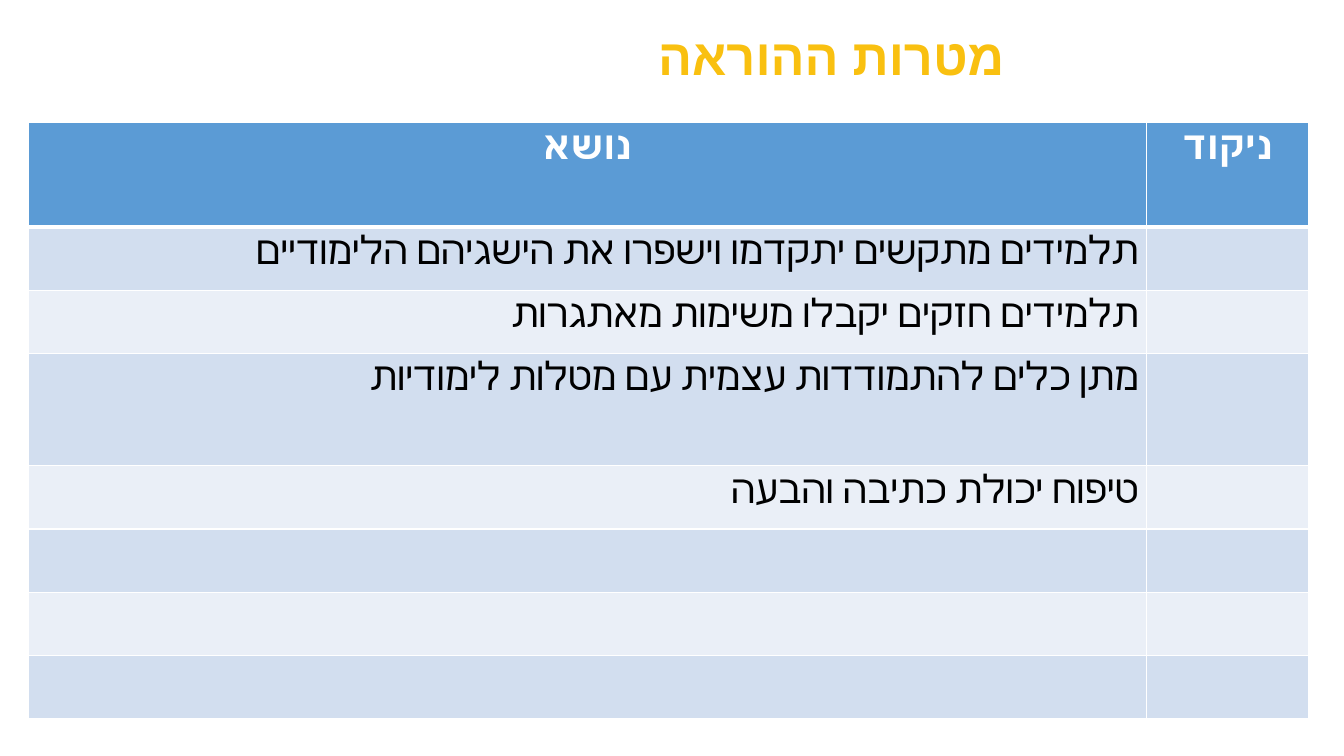
from lxml import etree
from pptx import Presentation
from pptx.dml.color import RGBColor
from pptx.enum.text import MSO_ANCHOR, MSO_AUTO_SIZE, PP_ALIGN
from pptx.oxml.ns import qn
from pptx.util import Cm, Pt

TOP = MSO_ANCHOR.TOP
FIXED = MSO_AUTO_SIZE.NONE
CENTER, RIGHT = PP_ALIGN.CENTER, PP_ALIGN.RIGHT

TITLE = "מטרות ההוראה"
HEAD = ("נושא", "ניקוד")
GOALS = [
    "תלמידים מתקשים יתקדמו וישפרו את הישגיהם הלימודיים",
    "תלמידים חזקים יקבלו משימות מאתגרות",
    "מתן כלים להתמודדות עצמית עם מטלות לימודיות",
    "טיפוח יכולת כתיבה והבעה",
    "",
    "",
    "",
]
ROWS = [HEAD] + [(goal, "") for goal in GOALS]
WIDTHS = (28.17, 4.09)
HEAD_TALL, ROW_TALL, WIDE_TALL = 2.64, 1.59, 2.84
WIDE_ROW = 3

THEME = {
    "title": {"size": Pt(36), "name": "Arial", "bold": True, "color": "F9C010"},
    "head": {"size": Pt(28), "name": "Calibri", "bold": True, "color": "FFFFFF"},
    "body": {"size": Pt(28), "name": "Calibri", "bold": False, "color": "000000"},
    "fill": "5B9BD5",
    "bands": ("D2DEEF", "EAEFF7"),
    "rule": "FFFFFF",
}


def apply(item, values):
    for key, value in values.items():
        setattr(item, key, value)


def style(para, look, align):
    para.alignment = align
    for run in para.runs:
        apply(run.font, {k: v for k, v in look.items() if k != "color"})
        run.font.color.rgb = RGBColor.from_string(look["color"])
        face = etree.SubElement(run.font._element, qn("a:cs"))
        face.set("typeface", look["name"])


def border(cell, base):
    props = cell._tc.get_or_add_tcPr()
    sides = {"lnL": 1, "lnR": 1, "lnT": 1, "lnB": base}
    for place, (side, width) in enumerate(sides.items()):
        line = etree.Element(qn(f"a:{side}"), w=str(Pt(width)))
        fill = etree.SubElement(line, qn("a:solidFill"))
        etree.SubElement(fill, qn("a:srgbClr"), val=THEME["rule"])
        props.insert(place, line)


def add_title(slide):
    title = slide.shapes.title
    apply(title, {"left": Cm(9.37), "top": Cm(-0.25),
                  "width": Cm(16.2), "height": Cm(2.29)})
    frame = title.text_frame
    frame.text = TITLE
    apply(frame, {"word_wrap": True, "auto_size": FIXED,
                  "vertical_anchor": TOP})
    para = frame.paragraphs[0]
    para.line_spacing = 1.5
    style(para, THEME["title"], RIGHT)
    para._p.get_or_add_pPr().set("rtl", "1")


def add_goals(slide):
    talls = [HEAD_TALL] + [ROW_TALL] * len(GOALS)
    talls[WIDE_ROW] = WIDE_TALL
    table = slide.shapes.add_table(
        len(ROWS), len(HEAD), Cm(0.72), Cm(3.08),
        Cm(sum(WIDTHS)), Cm(sum(talls))).table
    for col, width in zip(table.columns, WIDTHS):
        col.width = Cm(width)
    for r, (texts, tall) in enumerate(zip(ROWS, talls)):
        table.rows[r].height = Cm(tall)
        top = r == 0
        shade = THEME["fill"] if top else THEME["bands"][(r - 1) % 2]
        for c, text in enumerate(texts):
            cell = table.cell(r, c)
            cell.text = text
            apply(cell, {"margin_left": Cm(0.19), "margin_right": Cm(0.19),
                         "margin_top": 0, "margin_bottom": 0,
                         "vertical_anchor": TOP})
            cell.fill.solid()
            cell.fill.fore_color.rgb = RGBColor.from_string(shade)
            border(cell, 3 if top else 1)
            style(cell.text_frame.paragraphs[0],
                  THEME["head" if top else "body"],
                  CENTER if top else RIGHT)


def main():
    deck = Presentation()
    apply(deck, {"slide_width": Cm(33.87), "slide_height": Cm(19.05)})
    slide = deck.slides.add_slide(deck.slide_layouts[5])
    add_title(slide)
    add_goals(slide)
    deck.save("out.pptx")


if __name__ == "__main__":
    main()
